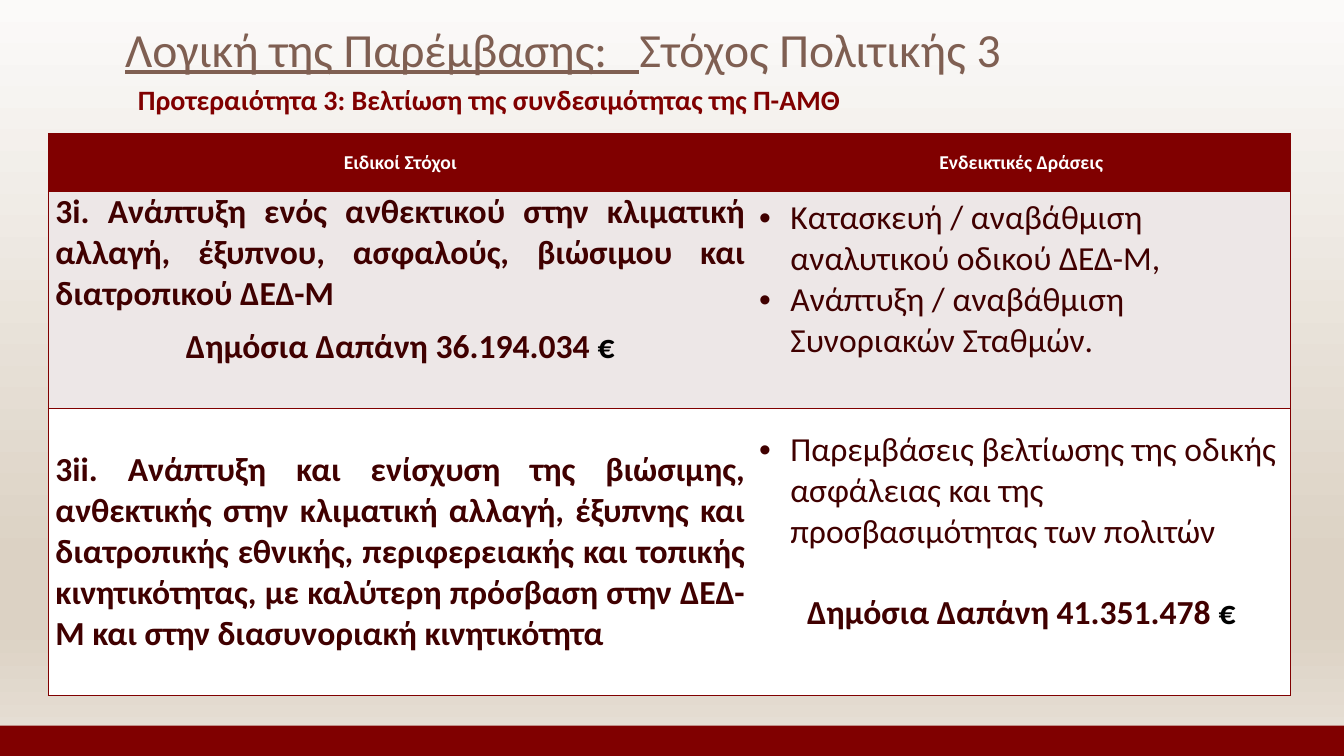
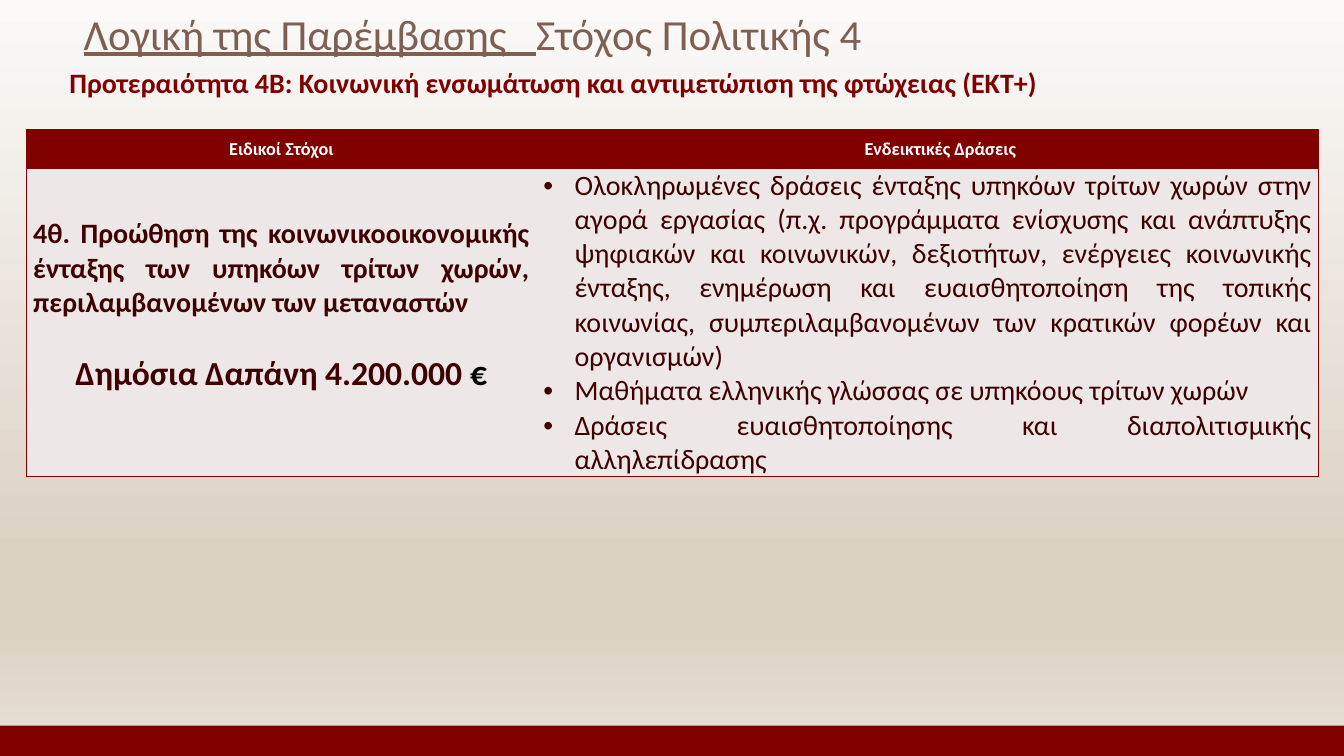
from lxml.etree import SubElement
from pptx import Presentation
from pptx.dml.color import RGBColor
from pptx.enum.shapes import MSO_SHAPE
from pptx.enum.text import MSO_ANCHOR, MSO_AUTO_SIZE, PP_ALIGN
from pptx.oxml.ns import qn
from pptx.util import Inches, Pt

FONT = "Calibri"
MAROON, BROWN, DARK, BLACK, WHITE, TINT = "800000", "7F5F52", "400000", "000000", "FFFFFF", "EDE7E7"
BACKDROP = [(0, "FBFAF9"), (74, "DCD2C4"), (83, "DCD2C4"), (100, "E8E1D8")]
HEADINGS = ["Ειδικοί Στόχοι", "Ενδεικτικές Δράσεις"]
MONEY_SIZE = 24


def rgb(code):
    """Turn a hex string into a colour."""
    return RGBColor.from_string(code)


class PolicyDeck:
    """Holds the shared style and the slide being built."""

    def __init__(self):
        """Open a wide deck with its backdrop."""
        self.deck = Presentation()
        self.deck.slide_width, self.deck.slide_height = Inches(13.33), Inches(7.5)
        self.master = self.deck.slide_master
        self.slide = None
        self.backdrop()

    def backdrop(self):
        """Give the master its vertical gradient."""
        fill = self.master.background.fill
        fill.gradient()
        fill.gradient_angle = 270
        stops = self.master.element.find(".//" + qn("a:gsLst"))
        for stop in list(stops):
            stops.remove(stop)
        for percent, code in BACKDROP:
            stop = SubElement(stops, qn("a:gs"), pos=str(percent * 1000))
            SubElement(stop, qn("a:srgbClr"), val=code)

    def band(self):
        """Move a bottom band onto the master."""
        band = self.slide.shapes.add_shape(
            MSO_SHAPE.RECTANGLE, 0, Inches(7.2), self.deck.slide_width, Inches(0.3))
        band.shadow.inherit = False
        band.fill.solid()
        band.fill.fore_color.rgb = rgb(MAROON)
        band.line.fill.background()
        self.master.shapes.element.append(band.element)

    def new_slide(self):
        """Start a title-only slide."""
        self.slide = self.deck.slides.add_slide(self.deck.slide_layouts[5])
        if len(self.deck.slides) == 1:
            self.band()

    def place(self, shape, left, top, width, height):
        """Set the position and size of a shape."""
        shape.left, shape.top = Inches(left), Inches(top)
        shape.width, shape.height = Inches(width), Inches(height)

    def style(self, span, size, color, bold=False):
        """Format one run."""
        span.font.name = FONT
        span.font.size = Pt(size)
        span.font.bold = bold
        span.font.color.rgb = rgb(color)

    def set_text(self, para, text, size, color, bold=False, align=PP_ALIGN.LEFT):
        """Fill a paragraph with one formatted run."""
        para.text = text
        para.alignment = align
        self.style(para.runs[0], size, color, bold)

    def title(self, lead, rest, at, size):
        """Set the title with an underlined lead."""
        title = self.slide.shapes.title
        self.place(title, *at)
        frame = title.text_frame
        frame.auto_size = MSO_AUTO_SIZE.NONE
        frame.vertical_anchor = MSO_ANCHOR.BOTTOM
        para = frame.paragraphs[0]
        self.set_text(para, lead, size, BROWN)
        para.line_spacing = 0.9
        para.runs[0].font.underline = True
        span = para.add_run()
        span.text = rest
        self.style(span, size, BROWN)

    def subtitle(self, text, at):
        """Add the priority line under the title."""
        box = self.slide.shapes.add_textbox(*(Inches(length) for length in at))
        box.text_frame.word_wrap = True
        para = box.text_frame.paragraphs[0]
        self.set_text(para, text, 20, MAROON, True, PP_ALIGN.JUSTIFY)
        para.line_spacing = 0.9
        self.indent(para, 0.05)

    def indent(self, para, margin, first=0):
        """Set the left margin and first-line indent."""
        properties = para._p.get_or_add_pPr()
        properties.set("marL", str(Inches(margin)))
        properties.set("indent", str(Inches(first)))
        return properties

    def goal(self, para, text, size, align):
        """Fill in a specific objective."""
        self.set_text(para, text, size, DARK, True, PP_ALIGN.JUSTIFY)

    def action(self, para, text, size, align):
        """Fill in a bulleted action."""
        self.set_text(para, text, size, DARK, align=align)
        properties = self.indent(para, 0.31, -0.31)
        SubElement(properties, qn("a:buFont"), typeface="Arial")
        SubElement(properties, qn("a:buChar"), char="•")

    def money(self, para, amount, size, align):
        """Fill in the public expenditure with a black euro sign."""
        self.set_text(para, f"Δημόσια Δαπάνη {amount} ", MONEY_SIZE, DARK, True, PP_ALIGN.CENTER)
        span = para.add_run()
        span.text = "€"
        self.style(span, MONEY_SIZE, BLACK, True)

    def cell(self, cell, fill, first, last):
        """Set the margins, borders and fill of a cell."""
        cell.vertical_anchor = MSO_ANCHOR.MIDDLE
        cell.margin_left = cell.margin_right = Inches(0.07)
        cell.margin_top = cell.margin_bottom = 0
        properties = cell._tc.get_or_add_tcPr()
        for edge, drawn in (("L", first), ("R", last), ("T", True), ("B", True)):
            line = SubElement(properties, qn(f"a:ln{edge}"), w=str(Pt(1)))
            if drawn:
                SubElement(SubElement(line, qn("a:solidFill")), qn("a:srgbClr"), val=MAROON)
            else:
                SubElement(line, qn("a:noFill"))
        cell.fill.solid()
        cell.fill.fore_color.rgb = rgb(fill)

    def table(self, left, top, widths, heights, rows, sizes, align=PP_ALIGN.LEFT, shift=0):
        """Draw the objectives table; each cell has entries and a bottom gap in points."""
        heading_size, size = sizes
        frame = self.slide.shapes.add_table(
            len(heights), len(widths), Inches(left), Inches(top),
            Inches(sum(widths)), Inches(sum(heights)))
        table = frame.table
        for column, width in zip(table.columns, widths):
            column.width = Inches(width)
        for row, height in zip(table.rows, heights):
            row.height = Inches(height)
        for row_index, fill in enumerate([MAROON, TINT, WHITE][:len(heights)]):
            for column_index in range(len(widths)):
                self.cell(table.cell(row_index, column_index), fill,
                          column_index == 0, column_index == len(widths) - 1)
        for column_index, heading in enumerate(HEADINGS):
            para = table.cell(0, column_index).text_frame.paragraphs[0]
            self.set_text(para, heading, heading_size, WHITE, True, PP_ALIGN.CENTER)
            self.indent(para, shift * column_index)
        for row_index, row in enumerate(rows, 1):
            for column_index, (entries, gap) in enumerate(row):
                cell = table.cell(row_index, column_index)
                cell.margin_bottom = Pt(gap)
                self.entries(cell.text_frame, entries, size, align)

    def entries(self, frame, entries, size, align):
        """Fill in the paragraphs of one cell."""
        for index, (kind, text, before) in enumerate(entries):
            para = frame.add_paragraph() if index else frame.paragraphs[0]
            para.space_before = Pt(before)
            kind(para, text, size, align)


def main():
    """Build and save both slides."""
    show = PolicyDeck()
    goal, action, money = show.goal, show.action, show.money

    show.new_slide()
    show.title("Λογική της Παρέμβασης:   ", "Στόχος Πολιτικής 3", (1.14, 0.19, 10.4, 0.63), 34)
    show.subtitle("Προτεραιότητα 3: Βελτίωση της συνδεσιμότητας της Π-ΑΜΘ", (1.22, 0.81, 11.23, 0.51))
    show.table(0.48, 1.33, [6.98, 5.34], [0.57, 2.15, 2.85], [
        [([(goal, "3i. Ανάπτυξη ενός ανθεκτικού στην κλιματική αλλαγή, έξυπνου, ασφαλούς, "
                  "βιώσιμου και διατροπικού ΔΕΔ-Μ", 0),
           (money, "36.194.034", 8)], 29),
         ([(action, "Κατασκευή / αναβάθμιση αναλυτικού οδικού ΔΕΔ-Μ,", 0),
           (action, "Ανάπτυξη / αναβάθμιση Συνοριακών Σταθμών.", 0)], 29)],
        [([(goal, "3ii. Ανάπτυξη και ενίσχυση της βιώσιμης, ανθεκτικής στην κλιματική αλλαγή, "
                  "έξυπνης και διατροπικής εθνικής, περιφερειακής και τοπικής κινητικότητας, "
                  "με καλύτερη πρόσβαση στην ΔΕΔ-Μ και στην διασυνοριακή κινητικότητα", 0)], 0),
         ([(action, "Παρεμβάσεις βελτίωσης της οδικής ασφάλειας και της προσβασιμότητας "
                    "των πολιτών", 0),
           (money, "41.351.478", 29)], 29)],
    ], (14, 24))

    show.new_slide()
    show.title("Λογική της Παρέμβασης   ", "Στόχος Πολιτικής 4", (0.73, 0.14, 10.4, 0.5), 30.6)
    show.subtitle("Προτεραιότητα 4Β: Κοινωνική ενσωμάτωση και αντιμετώπιση της φτώχειας (ΕΚΤ+)",
                  (0.54, 0.64, 10.4, 0.41))
    show.table(0.26, 1.29, [5.06, 7.76], [0.38, 3.06], [
        [([(goal, "4θ. Προώθηση της κοινωνικοοικονομικής ένταξης των υπηκόων τρίτων χωρών, "
                  "περιλαμβανομένων των μεταναστών", 0),
           (money, "4.200.000", 24)], 24),
         ([(action, "Ολοκληρωμένες δράσεις ένταξης υπηκόων τρίτων χωρών στην αγορά εργασίας "
                    "(π.χ. προγράμματα ενίσχυσης και ανάπτυξης ψηφιακών και κοινωνικών, "
                    "δεξιοτήτων, ενέργειες κοινωνικής ένταξης, ενημέρωση και ευαισθητοποίηση "
                    "της τοπικής κοινωνίας, συμπεριλαμβανομένων των κρατικών φορέων και "
                    "οργανισμών)", 0),
           (action, "Μαθήματα ελληνικής γλώσσας σε υπηκόους τρίτων χωρών", 0),
           (action, "Δράσεις ευαισθητοποίησης και διαπολιτισμικής αλληλεπίδρασης", 0)], 0)],
    ], (13, 20), PP_ALIGN.JUSTIFY, 0.25)

    show.deck.save("out.pptx")


if __name__ == "__main__":
    main()
